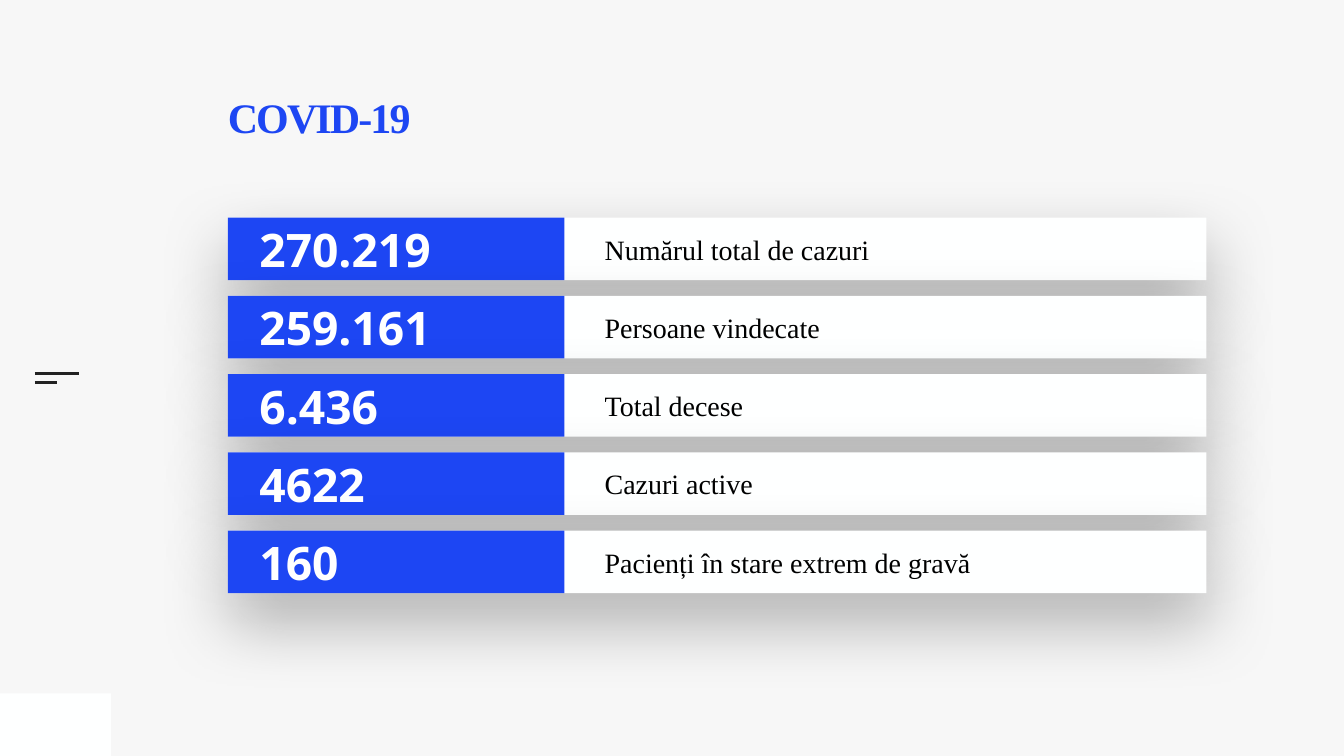
from lxml import etree
from pptx import Presentation
from pptx import util as u
from pptx.dml.color import RGBColor
from pptx.enum import shapes, text
from pptx.oxml import parse_xml
from pptx.oxml.ns import nsdecls, qn

BLUE = RGBColor(0x1D, 0x46, 0xF3)
PAPER = RGBColor(0xFE, 0xFF, 0xFF)
WHITE = RGBColor(0xFF, 0xFF, 0xFF)
BLACK = RGBColor(0x00, 0x00, 0x00)
INK = RGBColor(0x22, 0x22, 0x22)
BACKDROP = RGBColor(0xF7, 0xF7, 0xF7)
SERIF, SANS = "Times New Roman", "Open Sans"

LEFT, TOP, PITCH, ROW_HEIGHT = 16.95, 28.8, 10.35, 8.27
ROW_WIDTH, NUMBER_WIDTH = 72.82, 25.05
FIGURES = [
    ("270.219", "Numărul total de cazuri"),
    ("259.161", "Persoane vindecate"),
    ("6.436", "Total decese"),
    ("4622", "Cazuri active"),
    ("160", "Pacienți în stare extrem de gravă"),
]


def write(box, words, *, font, size, color, bold=False, inset=0.1,
          anchor=text.MSO_ANCHOR.MIDDLE, leading=None, tracking=None):
    """Put one formatted paragraph into a box."""
    frame = box.text_frame
    frame.word_wrap = True
    frame.vertical_anchor = anchor
    frame.margin_left = frame.margin_right = u.Inches(inset)
    frame.margin_top = frame.margin_bottom = u.Inches(inset)
    para = frame.paragraphs[0]
    if leading:
        para.line_spacing = u.Pt(leading)
    span = para.add_run()
    span.text = words
    span.font.name, span.font.size = font, u.Pt(size)
    span.font.bold, span.font.color.rgb = bold, color
    if tracking:
        span.font._element.set("spc", str(round(tracking * 100)))


class Sheet:
    """Draws on one page, with lengths as percentages of its size."""

    def __init__(self, deck):
        self.deck = deck
        self.page = deck.slides.add_slide(deck.slide_layouts[6])
        self.page.background.fill.solid()
        self.page.background.fill.fore_color.rgb = BACKDROP

    def across(self, share):
        return round(self.deck.slide_width * share / 100)

    def down(self, share):
        return round(self.deck.slide_height * share / 100)

    def area(self, left, top, width, height):
        return self.across(left), self.down(top), self.across(width), self.down(height)

    def block(self, parent, place, color, shadow=False):
        box = parent.shapes.add_shape(shapes.MSO_SHAPE.RECTANGLE, *self.area(*place))
        box.fill.solid()
        box.fill.fore_color.rgb = color
        box.line.fill.background()
        box.shadow.inherit = False
        if shadow:
            effects = box._element.spPr.find(qn("a:effectLst"))
            effects.append(parse_xml(
                f'<a:outerShdw {nsdecls("a")} blurRad="{u.Pt(100)}" dist="{u.Pt(40)}" '
                'dir="5400000" algn="ctr" rotWithShape="0"><a:srgbClr val="000000">'
                '<a:alpha val="30000"/></a:srgbClr></a:outerShdw>'))

    def label(self, parent, place, words, **style):
        write(parent.shapes.add_textbox(*self.area(*place)), words, **style)

    def rule(self, left, right, top):
        line = self.page.shapes.add_connector(
            shapes.MSO_CONNECTOR.STRAIGHT,
            self.across(left), self.down(top), self.across(right), self.down(top))
        line.line.color.rgb, line.line.width = INK, u.Pt(3)
        etree.SubElement(line._element.spPr, qn("a:effectLst"))

    def figure(self, top, number, caption):
        group = self.page.shapes.add_group_shape()
        self.block(group, (LEFT, top, ROW_WIDTH, ROW_HEIGHT), PAPER, shadow=True)
        self.label(group, (44.62, top, 44.21, ROW_HEIGHT), caption,
                   font=SERIF, size=40, color=BLACK)
        self.block(group, (LEFT, top, NUMBER_WIDTH, ROW_HEIGHT), BLUE)
        self.label(group, (18.94, top - 0.2, 22.68, 8.73), number,
                   font=SANS, size=66, color=WHITE, bold=True)


def main():
    deck = Presentation()
    deck.slide_width, deck.slide_height = u.Inches(26.67), u.Inches(15)
    sheet = Sheet(deck)
    sheet.block(sheet.page, (0, 91.73, 8.25, 8.27), PAPER)
    sheet.rule(2.59, 5.89, 49.4)
    sheet.rule(2.59, 4.24, 50.6)
    sheet.label(sheet.page, (LEFT, 12.53, 48.78, 18.2), "COVID-19", font=SERIF, size=60,
                color=BLUE, bold=True, inset=0, anchor=text.MSO_ANCHOR.TOP,
                leading=68, tracking=-2.7)
    for index, (number, caption) in enumerate(FIGURES):
        sheet.figure(TOP + index * PITCH, number, caption)
    deck.save("out.pptx")


if __name__ == "__main__":
    main()
